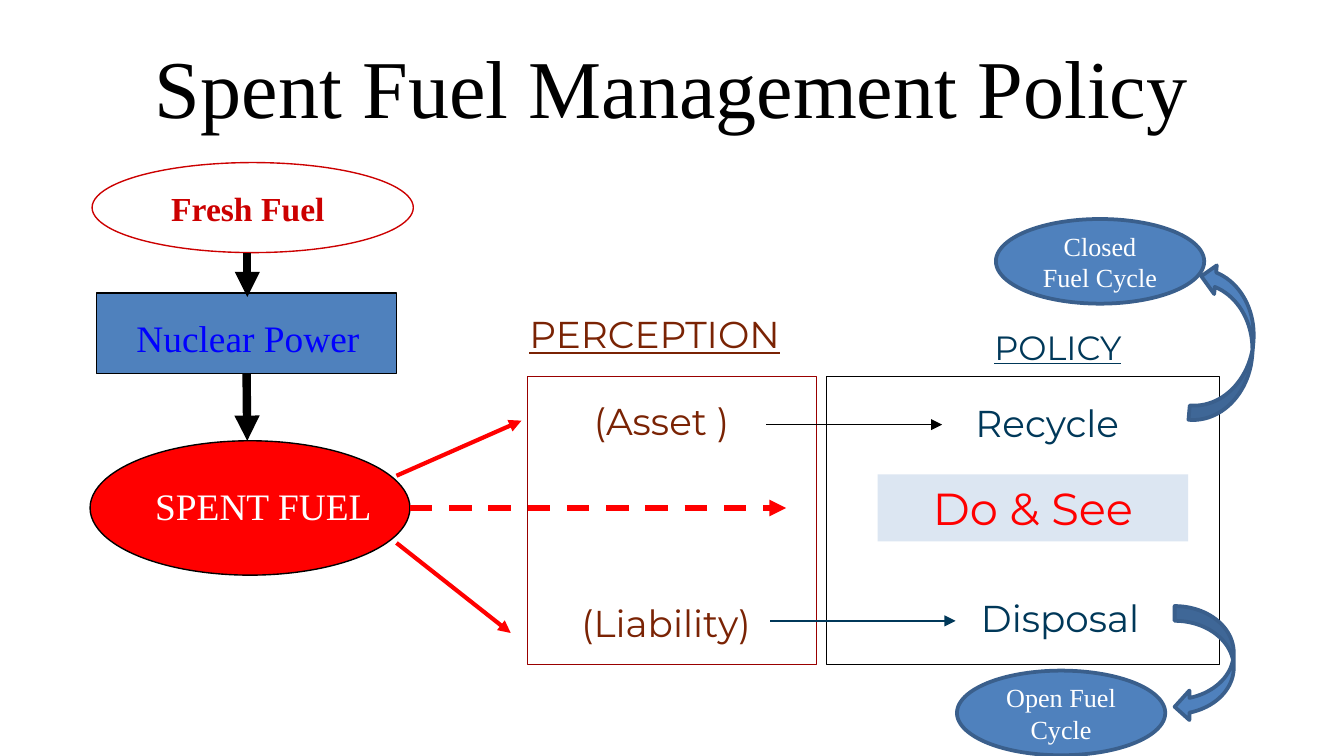
import pptx
import pptx.util
import pptx.dml.color
import pptx.enum.dml
import pptx.enum.shapes
import pptx.enum.text
import lxml.etree

SHAPES = pptx.enum.shapes.MSO_SHAPE
ALIGN = pptx.enum.text.PP_ALIGN
ANCHOR = pptx.enum.text.MSO_ANCHOR
SERIF, SANS = "Times New Roman", "Montserrat"
BLUE, EDGE, BROWN, NAVY = "4F81BD", "3A5F8C", "7A2304", "003859"
BLACK, RED, WHITE = "000000", "FF0000", "FFFFFF"

deck = pptx.Presentation()
deck.slide_width = pptx.util.Inches(10)
deck.slide_height = deck.slide_width * 9 // 16
page = deck.slides.add_slide(deck.slide_layouts[6])
column = deck.slide_width / 100
row = deck.slide_height / 56.25


def paint(target, color):
    target.rgb = pptx.dml.color.RGBColor.from_string(color)


def write(box, text, font, size, color, align, anchor, extra):
    frame = box.text_frame
    for name, value in {"word_wrap": True, "vertical_anchor": anchor}.items():
        setattr(frame, name, value)
    para = frame.paragraphs[0]
    para.alignment = align
    span = para.add_run()
    span.text = text
    style = {"name": font, "size": pptx.util.Pt(size), **extra}
    for name, value in style.items():
        setattr(span.font, name, value)
    paint(span.font.color, color)


shapes = {}
for name, kind, left, top, width, height, fill, edge, weight, turn in [
    ("nuclear", SHAPES.RECTANGLE, 7.2, 21.8, 22.3, 6, BLUE, BLACK, 0.75, 0),
    ("spent", SHAPES.OVAL, 6.7, 32.8, 23.8, 10, RED, BLACK, 0.75, 0),
    ("fresh", SHAPES.OVAL, 6.85, 12.1, 23.9, 6.7, None, "CC0000", 0.75, 0),
    ("perception", SHAPES.RECTANGLE, 39.2, 28, 21.5, 21.4, None, "990000", 0.25, 0),
    ("policy", SHAPES.RECTANGLE, 61.5, 28, 29.2, 21.4, None, BLACK, 0.25, 0),
    ("closed", SHAPES.OVAL, 74.1, 16.3, 15.5, 6.3, BLUE, EDGE, 2, 0),
    ("open", SHAPES.OVAL, 71.2, 49.9, 15.5, 6.3, BLUE, EDGE, 2, 0),
    ("to open", SHAPES.CURVED_LEFT_ARROW, 87.4, 45.1, 4.4, 8.6, BLUE, EDGE, 2, 0),
    ("to closed", SHAPES.CURVED_UP_ARROW, 85.2, 23.4, 11.8, 4.3, BLUE, EDGE, 2, 275.1),
    ("do and see", SHAPES.RECTANGLE, 65.3, 35.3, 23.1, 5, "DCE6F2", None, 0, 0),
]:
    shape = page.shapes.add_shape(
        kind, int(left * column), int(top * row), int(width * column), int(height * row)
    )
    shape.shadow.inherit = False
    shape.rotation = turn
    if fill:
        shape.fill.solid()
        paint(shape.fill.fore_color, fill)
    else:
        shape.fill.background()
    if edge:
        paint(shape.line.color, edge)
        shape.line.width = pptx.util.Pt(weight)
    else:
        shape.line.fill.background()
    shapes[name] = shape

for name, text, font, size, color, anchor in [
    ("closed", "Closed Fuel Cycle", SERIF, 14, WHITE, ANCHOR.MIDDLE),
    ("open", "Open Fuel Cycle", SERIF, 14, WHITE, ANCHOR.MIDDLE),
    ("do and see", "Do & See", SANS, 24, RED, ANCHOR.TOP),
]:
    write(shapes[name], text, font, size, color, ALIGN.CENTER, anchor, {})

for text, left, top, width, height, font, size, color, align, extra in [
    ("Spent Fuel Management Policy", 5, 1.7, 90, 9.4, SERIF, 44, BLACK, ALIGN.CENTER, {}),
    ("Fresh Fuel", 9.6, 13.5, 17.7, 4, SERIF, 18, "CC0000", ALIGN.CENTER, {"bold": True}),
    ("Nuclear Power", 4.2, 22.9, 28.5, 4.4, SERIF, 20, "0000FF", ALIGN.CENTER, {}),
    ("SPENT FUEL", 6.9, 35.4, 25.4, 4.4, SERIF, 20, WHITE, ALIGN.CENTER, {}),
    ("PERCEPTION", 38.4, 22.7, 25.4, 4.3, SANS, 20, BROWN, ALIGN.LEFT, {"underline": True}),
    ("(Asset )", 43.2, 29.1, 14.7, 4.4, SANS, 20, BROWN, ALIGN.LEFT, {}),
    ("(Liability)", 40.3, 44.1, 18.5, 4.4, SANS, 20, BROWN, ALIGN.CENTER, {}),
    ("POLICY", 73, 23.8, 16.1, 4, SANS, 18, NAVY, ALIGN.LEFT, {"underline": True}),
    ("Recycle", 71.6, 29.3, 14.4, 4.3, SANS, 20, NAVY, ALIGN.LEFT, {}),
    ("Disposal", 72, 43.8, 15.1, 4.3, SANS, 20, NAVY, ALIGN.LEFT, {}),
]:
    box = page.shapes.add_textbox(
        int(left * column), int(top * row), int(width * column), int(height * row)
    )
    write(box, text, font, size, color, align, ANCHOR.MIDDLE, extra)

for start_x, start_y, end_x, end_y, color, weight, dash, source in [
    (18.4, 18.8, 18.4, 22.1, BLACK, 4.5, None, None),
    (18.4, 27.8, 18.4, 32.8, BLACK, 4.5, None, "nuclear"),
    (29.5, 35.4, 38.8, 31.3, RED, 2.25, None, None),
    (30.5, 37.8, 58.5, 37.8, RED, 3, pptx.enum.dml.MSO_LINE.DASH, None),
    (29.5, 40.4, 38, 47.1, RED, 2.25, None, None),
    (57, 31.6, 70.1, 31.6, BLACK, 0.75, None, None),
    (57.3, 46.2, 71.1, 46.2, NAVY, 0.75, None, None),
]:
    arrow = page.shapes.add_connector(
        pptx.enum.shapes.MSO_CONNECTOR.STRAIGHT,
        int(start_x * column), int(start_y * row), int(end_x * column), int(end_y * row),
    )
    if source:
        arrow.begin_connect(shapes[source], 2)
    paint(arrow.line.color, color)
    for name, value in {"width": pptx.util.Pt(weight), "dash_style": dash}.items():
        setattr(arrow.line, name, value)
    properties = arrow._element.spPr
    outline = properties.find(pptx.oxml.ns.qn("a:ln"))
    lxml.etree.SubElement(outline, pptx.oxml.ns.qn("a:tailEnd"), type="triangle")
    lxml.etree.SubElement(properties, pptx.oxml.ns.qn("a:effectLst"))

deck.save("out.pptx")
